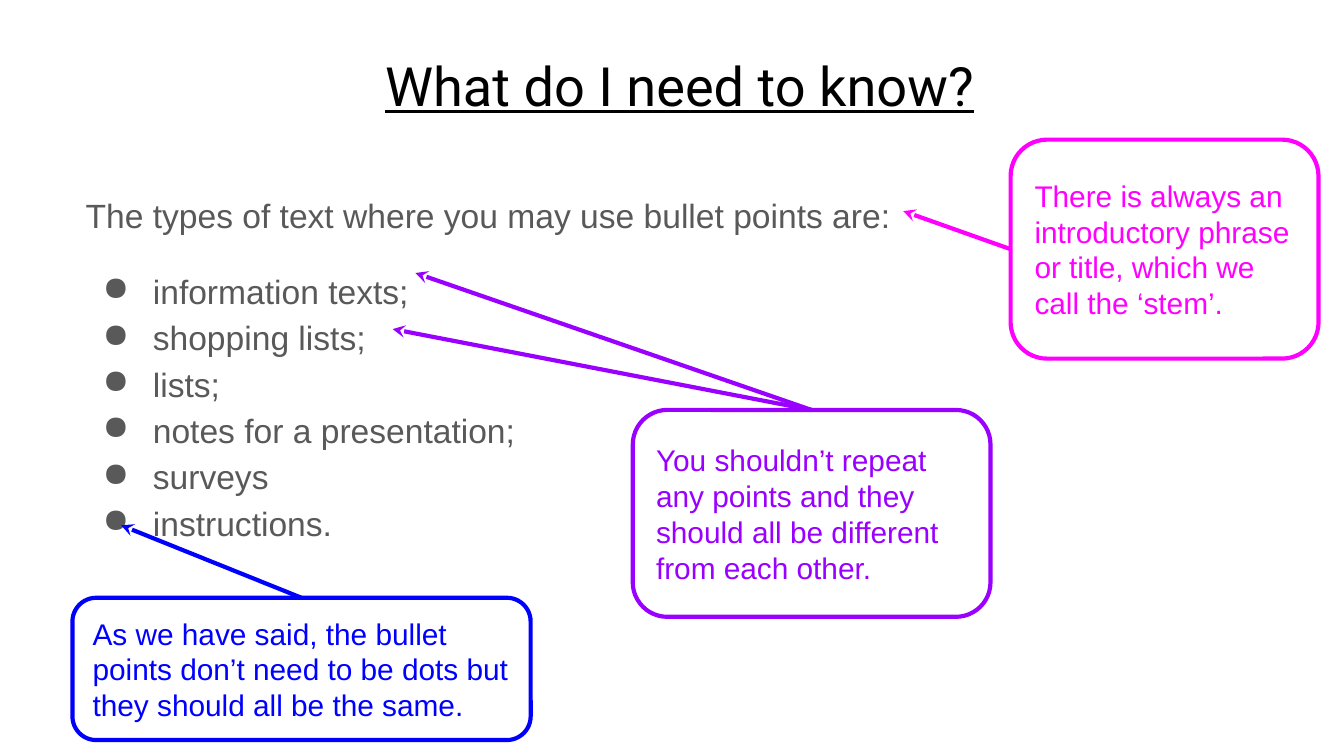
import dataclasses

import pptx
import pptx.dml.color
import pptx.enum.shapes
import pptx.enum.text
import pptx.oxml.ns
import pptx.util
from lxml import etree

Cm = pptx.util.Cm
Pt = pptx.util.Pt
qn = pptx.oxml.ns.qn
Align = pptx.enum.text.PP_ALIGN
Anchor = pptx.enum.text.MSO_ANCHOR


@dataclasses.dataclass(frozen=True)
class Theme:
    black: str = "000000"
    grey: str = "595959"
    pink: str = "FF00FF"
    purple: str = "9900FF"
    blue: str = "0000FF"
    heading_font: str = "Roboto"
    body_font: str = "Arial"
    heading_size: int = 29
    body_size: int = 18
    callout_size: int = 16
    line_width: float = 2.25


THEME = Theme()
TOP, LEFT = 0, 1

HEADING = "What do I need to know?"
STEM = "The types of text where you may use bullet points are:"
POINTS = [
    "information texts;",
    "shopping lists;",
    "lists;",
    "notes for a presentation;",
    "surveys",
    "instructions.",
]
CALLOUTS = [
    ("There is always an introductory phrase or title, which we call the ‘stem’.",
     THEME.pink, (19.1, 2.64, 5.82, 4.14), LEFT, [(17.07, 3.99)]),
    ("You shouldn’t repeat any points and they should all be different from each other.",
     THEME.purple, (11.96, 7.75, 6.76, 3.91), TOP, [(7.42, 6.22), (7.85, 5.16)]),
    ("As we have said, the bullet points don’t need to be dots but they should all be the same.",
     THEME.blue, (1.37, 11.3, 8.66, 2.69), TOP, [(2.29, 9.93)]),
]


def rgb(colour):
    return pptx.dml.color.RGBColor.from_string(colour)


def apply(target, formats):
    for name, value in formats.items():
        setattr(target, name, value)


def set_frame(shape, anchor):
    margins = {f"margin_{side}": Cm(0.25) for side in ("left", "top", "right", "bottom")}
    apply(shape.text_frame, {"word_wrap": True, "vertical_anchor": anchor, **margins})
    return shape.text_frame


def write(para, text, font, size, colour, underline=None, **formats):
    apply(para, formats)
    span = para.add_run()
    span.text = text
    apply(span.font, {"name": font, "size": Pt(size), "underline": underline})
    span.font.color.rgb = rgb(colour)


def add_bullet(para, colour):
    properties = para._p.get_or_add_pPr()
    apply_indent = {"marL": Cm(1.27), "indent": -Cm(0.95)}
    for name, value in apply_indent.items():
        properties.set(name, str(int(value)))
    bullet_colour = etree.SubElement(properties, qn("a:buClr"))
    etree.SubElement(bullet_colour, qn("a:srgbClr"), val=colour)
    etree.SubElement(properties, qn("a:buChar"), char="●")


def add_heading(page, box):
    shape = page.shapes.add_textbox(*map(Cm, box))
    frame = set_frame(shape, Anchor.TOP)
    write(frame.paragraphs[0], HEADING, THEME.heading_font, THEME.heading_size,
          THEME.black, underline=True, alignment=Align.CENTER)


def add_list(page, box):
    shape = page.shapes.add_textbox(*map(Cm, box))
    frame = set_frame(shape, Anchor.MIDDLE)
    style = (THEME.body_font, THEME.body_size, THEME.grey)
    write(frame.paragraphs[0], STEM, *style, line_spacing=1.15)
    for index, point in enumerate(POINTS):
        para = frame.add_paragraph()
        write(para, point, *style, line_spacing=1.15,
              space_before=Pt(0 if index else 16))
        add_bullet(para, THEME.grey)


def add_arrow(page, callout, side, target, colour):
    end_x, end_y = map(Cm, target)
    arrow = page.shapes.add_connector(
        pptx.enum.shapes.MSO_CONNECTOR.STRAIGHT, 0, 0, end_x, end_y)
    arrow.begin_connect(callout, side)
    arrow.line.color.rgb = rgb(colour)
    arrow.line.width = Pt(THEME.line_width)
    etree.SubElement(arrow.line._get_or_add_ln(), qn("a:tailEnd"), type="stealth")
    etree.SubElement(arrow._element.spPr, qn("a:effectLst"))


def add_callout(page, box, text, colour, side, targets):
    shape = page.shapes.add_shape(
        pptx.enum.shapes.MSO_SHAPE.ROUNDED_RECTANGLE, *map(Cm, box))
    shape.shadow.inherit = False
    shape.fill.background()
    shape.line.color.rgb = rgb(colour)
    shape.line.width = Pt(THEME.line_width)
    frame = set_frame(shape, Anchor.MIDDLE)
    write(frame.paragraphs[0], text, THEME.body_font, THEME.callout_size,
          colour, alignment=Align.LEFT)
    for target in targets:
        add_arrow(page, shape, side, target, colour)


def main():
    deck = pptx.Presentation()
    apply(deck, {"slide_width": Cm(25.4), "slide_height": Cm(14.29)})
    page = deck.slides.add_slide(deck.slide_layouts[6])
    add_list(page, (1.37, 1.24, 17.68, 11.35))
    add_heading(page, (1.37, 0.74, 22.96, 2.24))
    for text, colour, box, side, targets in CALLOUTS:
        add_callout(page, box, text, colour, side, targets)
    deck.save("out.pptx")


if __name__ == "__main__":
    main()
